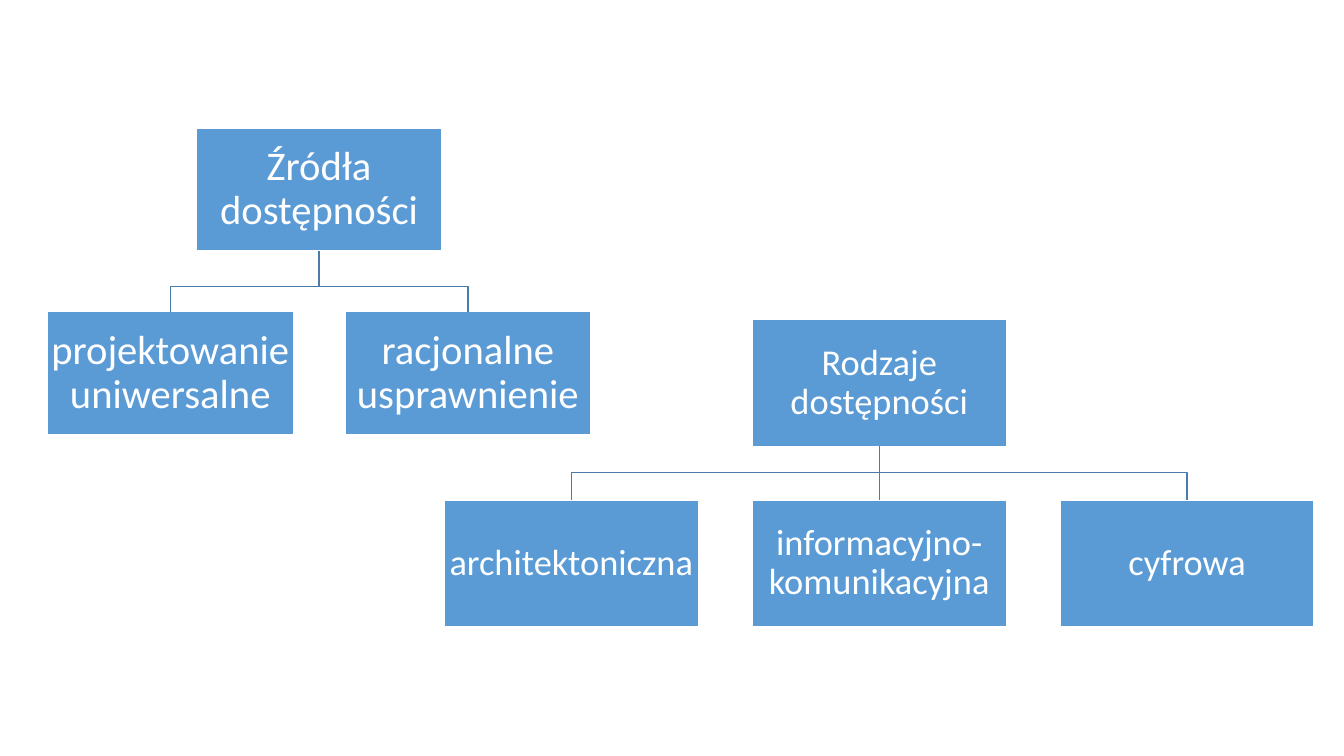
import pptx
import pptx.util
import pptx.dml.color
import pptx.enum.shapes
import pptx.enum.text
import lxml.etree
from dataclasses import dataclass

Pt = pptx.util.Pt

TREES = [
    {
        "root": "Źródła dostępności",
        "branches": ["projektowanie uniwersalne", "racjonalne usprawnienie"],
        "left": 33.84, "step": 212.6, "box": (175.7, 87.84),
        "root_top": 91.44, "bus": 204.5, "branch_top": 222.5, "size": 29,
    },
    {
        "root": "Rodzaje dostępności",
        "branches": ["architektoniczna", "informacyjno-komunikacyjna", "cyfrowa"],
        "left": 317.5, "step": 219.9, "box": (181.4, 90.7),
        "root_top": 228.2, "bus": 337.7, "branch_top": 357.1, "size": 26,
    },
]


@dataclass(frozen=True)
class Theme:
    box: str = "5B9BD5"
    branch: str = "497CAB"
    light: str = "FFFFFF"
    font: str = "Calibri"
    line: float = 1
    inset: float = 1.44
    spacing: float = 0.9


THEME = Theme()


def rgb(value):
    return pptx.dml.color.RGBColor.from_string(value)


def style_line(line, color):
    line.color.rgb = rgb(color)
    line.width = Pt(THEME.line)


def add_node(tree, label, left, top, width, height, size):
    node = tree.shapes.add_shape(
        pptx.enum.shapes.MSO_SHAPE.RECTANGLE, Pt(left), Pt(top), Pt(width), Pt(height))
    node.shadow.inherit = False
    node.fill.solid()
    node.fill.fore_color.rgb = rgb(THEME.box)
    style_line(node.line, THEME.light)
    frame = node.text_frame
    frame.text = label
    frame.word_wrap = True
    frame.vertical_anchor = pptx.enum.text.MSO_ANCHOR.MIDDLE
    frame.margin_left = frame.margin_right = Pt(THEME.inset)
    frame.margin_top = frame.margin_bottom = Pt(THEME.inset)
    paragraph = frame.paragraphs[0]
    paragraph.alignment = pptx.enum.text.PP_ALIGN.CENTER
    paragraph.line_spacing = THEME.spacing
    font = paragraph.runs[0].font
    font.name = THEME.font
    font.size = Pt(size)
    font.color.rgb = rgb(THEME.light)
    return node


def add_straight_branch(tree, root, child):
    branch = tree.shapes.add_connector(
        pptx.enum.shapes.MSO_CONNECTOR.STRAIGHT, 0, 0, 0, 0)
    branch.begin_connect(root, 2)
    branch.end_connect(child, 0)
    style_line(branch.line, THEME.branch)
    lxml.etree.SubElement(
        branch.element.spPr, pptx.oxml.ns.qn("a:effectLst"))


def add_bent_branch(tree, start, bus, end):
    builder = tree.shapes.build_freeform(Pt(start[0]), Pt(start[1]))
    corners = [(start[0], bus), (end[0], bus), end]
    builder.add_line_segments([(Pt(x), Pt(y)) for x, y in corners], close=False)
    branch = builder.convert_to_shape()
    branch.shadow.inherit = False
    branch.fill.background()
    style_line(branch.line, THEME.branch)


def add_tree(slide, content):
    tree = slide.shapes.add_group_shape()
    width, height = content["box"]
    branches = content["branches"]
    middle = (len(branches) - 1) / 2
    root_left = content["left"] + middle * content["step"]
    root = add_node(tree, content["root"], root_left, content["root_top"],
                    width, height, content["size"])
    start = (root_left + width / 2, content["root_top"] + height)
    for index, label in enumerate(branches):
        left = content["left"] + index * content["step"]
        child = add_node(tree, label, left, content["branch_top"],
                         width, height, content["size"])
        if index == middle:
            add_straight_branch(tree, root, child)
        else:
            end = (left + width / 2, content["branch_top"])
            add_bent_branch(tree, start, content["bus"], end)


def main():
    deck = pptx.Presentation()
    deck.slide_width, deck.slide_height = Pt(960), Pt(540)
    slide = deck.slides.add_slide(deck.slide_layouts[6])
    for content in TREES:
        add_tree(slide, content)
    deck.save("out.pptx")


if __name__ == "__main__":
    main()
